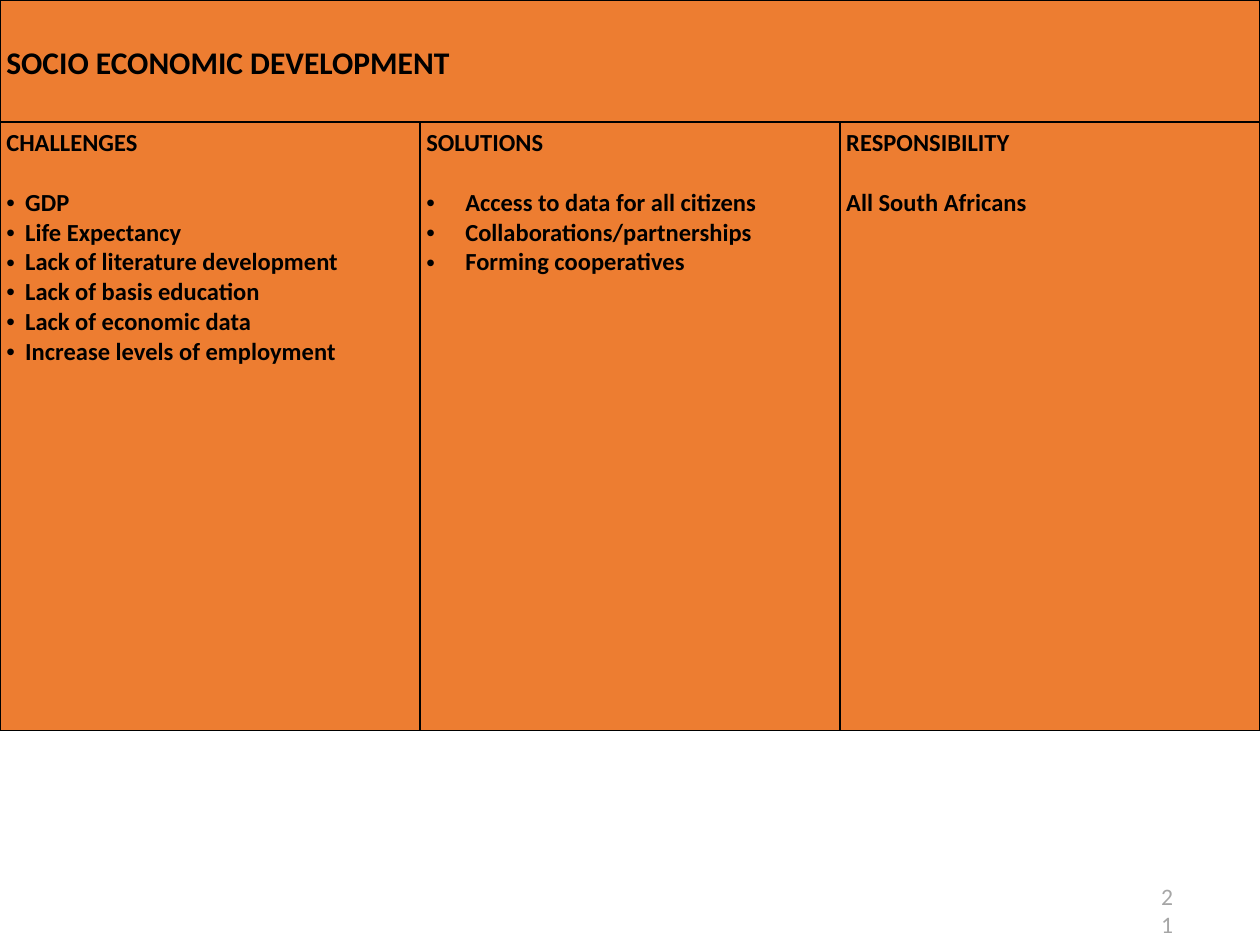
from dataclasses import dataclass

from lxml.etree import SubElement
from pptx import Presentation
from pptx.dml.color import RGBColor as RGB
from pptx.enum.text import MSO_ANCHOR as Anchor, PP_ALIGN as Align
from pptx.oxml.ns import qn
from pptx.util import Inches, Pt


@dataclass(frozen=True)
class Theme:
    font: str = "Calibri"
    fill: str = "ED7D31"
    ink: str = "000000"
    muted: str = "A6A6A6"
    title: float = 18
    body: float = 14
    number: float = 13.5
    gap: float = 17       # one body line below a heading
    border: float = 1
    inset: float = 0.05


class Deck:
    def __init__(self, theme, width, height):
        self.theme = theme
        self.prs = Presentation()
        self.prs.slide_width, self.prs.slide_height = Inches(width), Inches(height)
        self.s = self.prs.slides.add_slide(self.prs.slide_layouts[6])

    def box(self, x, y, w, h):
        """Turn shares of the slide's size into lengths."""
        sw, sh = self.prs.slide_width, self.prs.slide_height
        return int(x * sw), int(y * sh), int(w * sw), int(h * sh)

    def run(self, p, text, size, color, bold=False):
        r = p.add_run()
        r.text = text
        r.font.name, r.font.size, r.font.bold = self.theme.font, Pt(size), bold
        r.font.color.rgb = RGB.from_string(color)

    def bullet(self, p, indent):
        pPr = p._p.get_or_add_pPr()
        pPr.set("marL", str(Inches(indent)))
        pPr.set("indent", str(-Inches(indent)))
        SubElement(pPr, qn("a:buFont"), typeface="Arial")
        SubElement(pPr, qn("a:buChar"), char="•")

    def style_cell(self, cell):
        t = self.theme
        cell.margin_left = cell.margin_right = Inches(t.inset)
        cell.margin_top = cell.margin_bottom = Inches(t.inset)
        cell.vertical_anchor = Anchor.TOP
        tcPr = cell._tc.get_or_add_tcPr()
        for side in ("lnL", "lnR", "lnT", "lnB"):
            ln = SubElement(tcPr, qn(f"a:{side}"), w=str(Pt(t.border)))
            SubElement(SubElement(ln, qn("a:solidFill")), qn("a:srgbClr"), val=t.ink)
        cell.fill.solid()
        cell.fill.fore_color.rgb = RGB.from_string(t.fill)

    def fill_column(self, cell, heading, items, indent):
        t = self.theme
        p = cell.text_frame.paragraphs[0]
        p.space_after = Pt(t.gap)
        self.run(p, heading, t.body, t.ink, bold=True)
        for item in items:
            p = cell.text_frame.add_paragraph()
            if indent:
                self.bullet(p, indent)
            self.run(p, item, t.body, t.ink, bold=True)

    def table(self, title, columns, area, title_share):
        t, n = self.theme, len(columns)
        x, y, w, h = self.box(*area)
        table = self.s.shapes.add_table(2, n, x, y, w, h).table
        table.first_row = table.horz_banding = False
        table.rows[0].height = int(h * title_share)
        table.rows[1].height = h - table.rows[0].height
        for col in table.columns:
            col.width = w // n
        for cell in table.iter_cells():
            self.style_cell(cell)

        # Title row across all columns
        head = table.cell(0, 0)
        head.merge(table.cell(0, n - 1))
        head.margin_top = Inches(0.35)
        self.run(head.text_frame.paragraphs[0], title, t.title, t.ink, bold=True)

        # One heading and list per column
        for i, column in enumerate(columns):
            self.fill_column(table.cell(1, i), *column)

    def page_number(self, text, area):
        t = self.theme
        tf = self.s.shapes.add_textbox(*self.box(*area)).text_frame
        tf.word_wrap = True
        tf.margin_left = tf.margin_right = tf.margin_bottom = 0
        tf.margin_top = Inches(t.inset)
        p = tf.paragraphs[0]
        p.alignment = Align.RIGHT
        self.run(p, text, t.number, t.muted)


# Heading, items, bullet indent in inches (0 for plain text)
COLUMNS = [
    ("CHALLENGES", ["GDP", "Life Expectancy", "Lack of literature development",
                    "Lack of basis education", "Lack of economic data",
                    "Increase levels of employment"], 0.15),
    ("SOLUTIONS", ["Access to data for all citizens", "Collaborations/partnerships",
                   "Forming cooperatives"], 0.31),
    ("RESPONSIBILITY", ["All South Africans"], 0),
]


def main():
    deck = Deck(Theme(), 10, 7.5)
    deck.page_number("21", (0.915, 6.95 / 7.5, 0.016, 0.18 / 7.5))
    deck.table("SOCIO ECONOMIC DEVELOPMENT", COLUMNS, (0, 0, 1, 5.8 / 7.5), 0.97 / 5.8)
    deck.prs.save("out.pptx")


if __name__ == "__main__":
    main()
